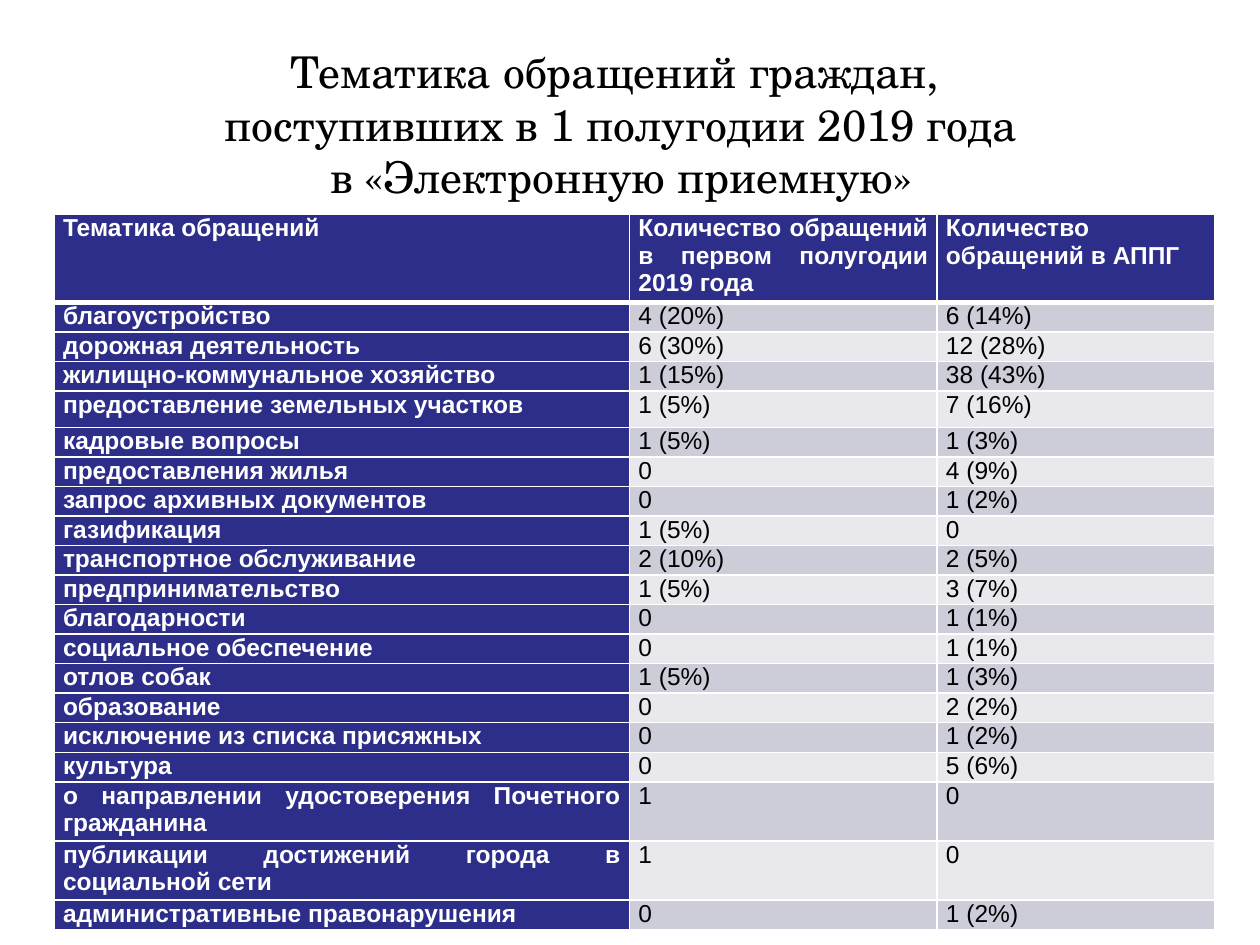
"""Build a slide with a table of citizens' appeals by topic."""
from lxml.etree import SubElement
from pptx import Presentation
from pptx.dml.color import RGBColor
from pptx.enum.text import MSO_ANCHOR, PP_ALIGN
from pptx.oxml.ns import qn
from pptx.util import Cm, Pt

COLORS = {"navy": "2D2D8A", "dark_band": "CDCDDA", "light_band": "E8E8ED",
          "white": "FFFFFF", "black": "000000"}
HEADER = ("Тематика обращений",
          "Количество обращений в первом полугодии 2019 года",
          "Количество обращений в АППГ")
TOPICS = [
    ("благоустройство", "4 (20%)", "6 (14%)"),
    ("дорожная деятельность", "6 (30%)", "12 (28%)"),
    ("жилищно-коммунальное хозяйство", "1 (15%)", "38 (43%)"),
    ("предоставление земельных участков", "1 (5%)", "7 (16%)"),
    ("кадровые вопросы", "1 (5%)", "1 (3%)"),
    ("предоставления жилья", "0", "4 (9%)"),
    ("запрос архивных документов", "0", "1 (2%)"),
    ("газификация", "1 (5%)", "0"),
    ("транспортное обслуживание", "2 (10%)", "2 (5%)"),
    ("предпринимательство", "1 (5%)", "3 (7%)"),
    ("благодарности", "0", "1 (1%)"),
    ("социальное обеспечение", "0", "1 (1%)"),
    ("отлов собак", "1 (5%)", "1 (3%)"),
    ("образование", "0", "2 (2%)"),
    ("исключение из списка присяжных", "0", "1 (2%)"),
    ("культура", "0", "5 (6%)"),
    ("о направлении удостоверения Почетного гражданина", "1", "0"),
    ("публикации достижений города в социальной сети", "1", "0"),
    ("административные правонарушения", "0", "1 (2%)"),
]
COLUMN_WIDTHS = (11.6, 6.2, 5.59)
ROW_HEIGHT = 0.59
SPECIAL_HEIGHTS = {0: 0.76, 4: 0.74, 15: 0.61, 17: 1.19, 18: 1.19, 19: 0.1}


def format_runs(paragraph, font_name, size, color, bold=False):
    for run in paragraph.runs:
        run.font.name = font_name
        run.font.size = Pt(size)
        run.font.bold = bold
        run.font.color.rgb = RGBColor.from_string(COLORS[color])


def add_border(cell, side, width):
    line = SubElement(cell._tc.get_or_add_tcPr(), qn(f"a:ln{side}"), w=str(Pt(width)))
    fill = SubElement(line, qn("a:solidFill"))
    SubElement(fill, qn("a:srgbClr"), val=COLORS["white"])


presentation = Presentation()
presentation.slide_width = Cm(25.4)
presentation.slide_height = Cm(19.05)
slide = presentation.slides.add_slide(presentation.slide_layouts[6])

title = slide.shapes.add_textbox(Cm(1.09), Cm(0.91), Cm(22.86), Cm(3.18))
title.text_frame.word_wrap = True
title.text_frame.vertical_anchor = MSO_ANCHOR.MIDDLE
title.text_frame.text = ("Тематика обращений граждан, \v"
                         "поступивших в 1 полугодии 2019 года\v"
                         "в «Электронную приемную»")
paragraph = title.text_frame.paragraphs[0]
paragraph.alignment = PP_ALIGN.CENTER
format_runs(paragraph, "TeX Gyre Schola", 25, "black")

rows = [HEADER, *TOPICS]
table = slide.shapes.add_table(len(rows), len(HEADER), Cm(1.09), Cm(4.32),
                               Cm(sum(COLUMN_WIDTHS)), Cm(14.38)).table
table.first_col = True
for column, width in zip(table.columns, COLUMN_WIDTHS):
    column.width = Cm(width)

for row_index, texts in enumerate(rows):
    table.rows[row_index].height = Cm(SPECIAL_HEIGHTS.get(row_index, ROW_HEIGHT))
    band = "dark_band" if row_index % 2 else "light_band"
    for column_index, text in enumerate(texts):
        heading = row_index == 0 or column_index == 0
        cell = table.cell(row_index, column_index)
        cell.margin_left = cell.margin_right = Cm(0.18)
        cell.margin_top = cell.margin_bottom = Cm(0)
        for side in "LRTB":
            under_header = (row_index, side) in ((0, "B"), (1, "T"))
            add_border(cell, side, 3 if under_header else 1)
        cell.fill.solid()
        cell.fill.fore_color.rgb = RGBColor.from_string(COLORS["navy" if heading else band])
        cell.text_frame.text = text
        paragraph = cell.text_frame.paragraphs[0]
        paragraph.alignment = PP_ALIGN.JUSTIFY
        format_runs(paragraph, "Arial", 14, "white" if heading else "black", heading)

presentation.save("out.pptx")
